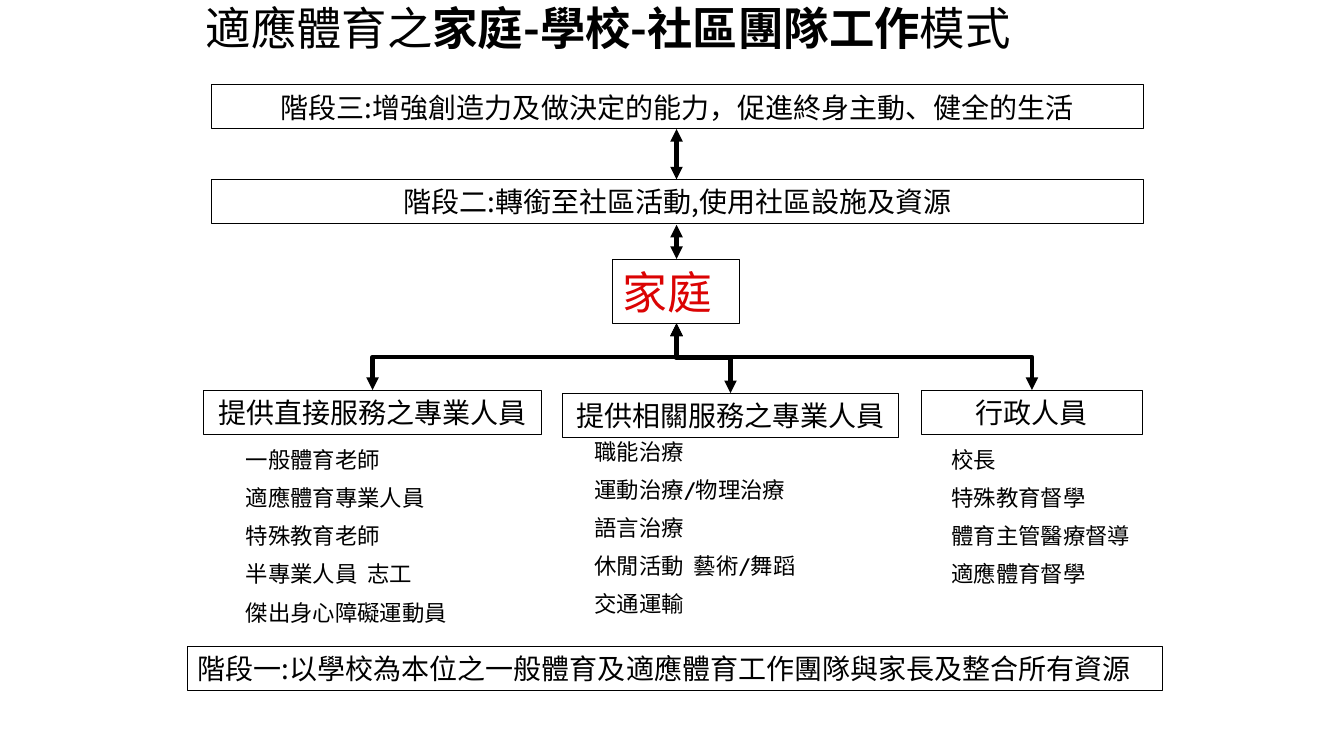
import pptx
import pptx.util
import pptx.dml.color
import pptx.enum.shapes
import pptx.enum.text
import pptx.oxml.ns
from lxml import etree

Inches, Pt = pptx.util.Inches, pptx.util.Pt
qn = pptx.oxml.ns.qn
ALIGN = pptx.enum.text.PP_ALIGN
ANCHOR = pptx.enum.text.MSO_ANCHOR
CONNECTOR = pptx.enum.shapes.MSO_CONNECTOR


def rgb(hex_string):
    return pptx.dml.color.RGBColor.from_string(hex_string)


class Diagram:
    """Holds the style and the current slide."""
    BLACK, RED = "000000", "DB0303"
    LATIN, CJK = "Cabin", "Noto Sans CJK SC"

    def __init__(self, s):
        self.s = s

    def style(self, r, size, color=BLACK, font=LATIN, bold=None):
        r.font.size, r.font.bold = Pt(size), bold
        r.font.name = font
        r.font.color.rgb = rgb(color)
        ea = etree.SubElement(r.font._element, qn("a:ea"))
        ea.set("typeface", font)

    def title(self, parts, left, top, width, height, size):
        sp = self.s.shapes.title
        sp.left, sp.top = Inches(left), Inches(top)
        sp.width, sp.height = Inches(width), Inches(height)
        tf = sp.text_frame
        tf.auto_size = pptx.enum.text.MSO_AUTO_SIZE.NONE
        tf.vertical_anchor = ANCHOR.MIDDLE
        p = tf.paragraphs[0]
        p.alignment, p.line_spacing = ALIGN.LEFT, 0.9
        for text, bold in parts:
            r = p.add_run()
            r.text = text
            self.style(r, size, font=self.CJK, bold=bold)

    def box(self, text, left, top, width, height=0.44, size=20,
            color=BLACK, font=LATIN, align=ALIGN.CENTER):
        sp = self.s.shapes.add_shape(
            pptx.enum.shapes.MSO_SHAPE.RECTANGLE,
            Inches(left), Inches(top), Inches(width), Inches(height))
        sp.shadow.inherit = False
        sp.fill.background()
        sp.line.color.rgb = rgb(self.BLACK)
        sp.line.width = Pt(0.75)
        tf = sp.text_frame
        tf.word_wrap = True
        tf.vertical_anchor = ANCHOR.MIDDLE
        tf.text = text
        p = tf.paragraphs[0]
        p.alignment = align
        self.style(p.runs[0], size, color, font)

    def list(self, items, left, top, width, height):
        sp = self.s.shapes.add_textbox(
            Inches(left), Inches(top), Inches(width), Inches(height))
        tf = sp.text_frame
        tf.word_wrap = True
        tf.text = "\n".join(items)
        for i, p in enumerate(tf.paragraphs):
            p.space_before = Pt(8 if i else 0)
            self.style(p.runs[0], 16)

    def arrow(self, kind, x1, y1, x2, y2):
        c = self.s.shapes.add_connector(
            kind, Inches(x1), Inches(y1), Inches(x2), Inches(y2))
        c.line.color.rgb = rgb(self.BLACK)
        c.line.width = Pt(3)
        ln = c.line._get_or_add_ln()
        for end in ("a:headEnd", "a:tailEnd"):
            etree.SubElement(ln, qn(end)).set("type", "triangle")
        etree.SubElement(c._element.spPr, qn("a:effectLst"))
        return c

    def branch(self, x1, y1, x2, y2):
        """Elbow that leaves and arrives vertically: a turned frame."""
        cx, cy = (x1 + x2) / 2, (y1 + y2) / 2
        w, h = (y2 - y1) / 2, abs(x2 - x1) / 2
        if x2 > x1:
            w, turn = -w, 270
        else:
            turn = 90
        c = self.arrow(CONNECTOR.ELBOW, cx - w, cy - h, cx + w, cy + h)
        c._element.spPr.find(qn("a:xfrm")).set("rot", str(turn * 60000))


def main():
    prs = pptx.Presentation()
    prs.slide_width, prs.slide_height = Inches(13.33), Inches(7.5)
    d = Diagram(prs.slides.add_slide(prs.slide_layouts[5]))

    # Title
    d.title([("適應體育之", False), ("家庭-學校-社區團隊工作", True),
             ("模式", False)], 1.94, 0, 9.5, 0.62, 32.4)

    # Stages and family
    d.box("階段三:增強創造力及做決定的能力，促進終身主動、健全的生活",
          2.1, 0.84, 9.24, font=d.CJK)
    d.box("階段二:轉銜至社區活動,使用社區設施及資源",
          2.1, 1.78, 9.24, font=d.CJK)
    d.box("家庭", 6.08, 2.57, 1.26, 0.64, 32, d.RED, align=ALIGN.LEFT)
    d.box("階段一:以學校為本位之一般體育及適應體育工作團隊與家長及整合所有資源",
          1.86, 6.41, 9.67, font=d.CJK, align=ALIGN.LEFT)

    # Staff groups: heading box, list box, items
    groups = [
        ("提供直接服務之專業人員", (2.02, 3.87, 3.35), (2.34, 4.38, 2.6, 1.97),
         ["一般體育老師", "適應體育專業人員", "特殊教育老師",
          "半專業人員  志工", "傑出身心障礙運動員"]),
        ("提供相關服務之專業人員", (5.58, 3.9, 3.33), (5.8, 4.3, 2.84, 1.97),
         ["職能治療", "運動治療/物理治療", "語言治療",
          "休閒活動  藝術/舞蹈", "交通運輸"]),
        ("行政人員", (9.14, 3.87, 2.19), (9.34, 4.38, 2, 1.57),
         ["校長", "特殊教育督學", "體育主管醫療督導", "適應體育督學"]),
    ]
    family_x, family_bottom = 6.71, 3.21
    for heading, (left, top, width), list_at, items in groups:
        d.box(heading, left, top, width)
        d.list(items, *list_at)
        d.branch(family_x, family_bottom, left + width / 2, top)

    # Arrows between the stages and the family
    for top, bottom in ((1.28, 1.78), (2.23, 2.57)):
        d.arrow(CONNECTOR.STRAIGHT, family_x, top, family_x, bottom)

    prs.save("out.pptx")


if __name__ == "__main__":
    main()
